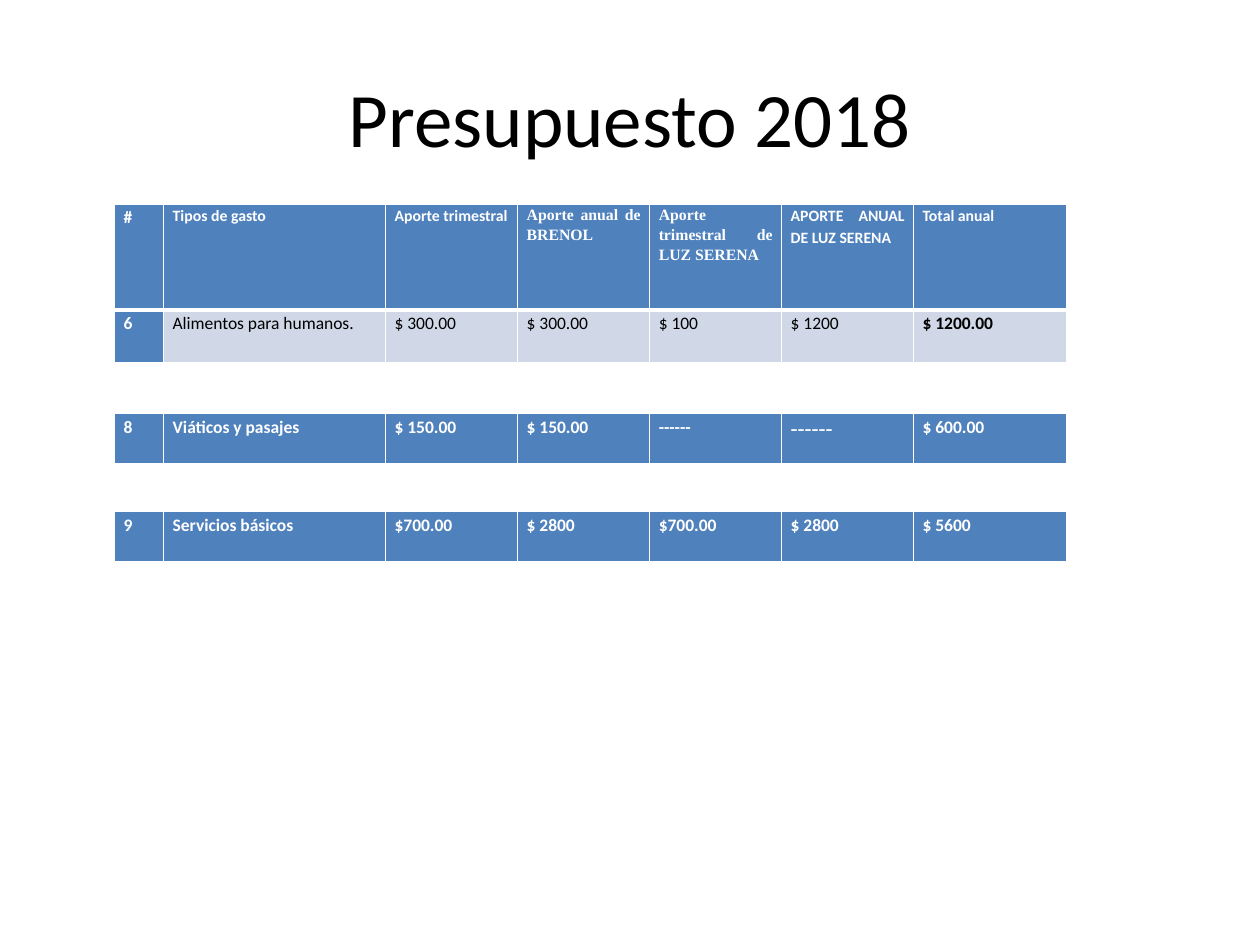
from lxml import etree
from pptx import Presentation
from pptx.dml.color import RGBColor
from pptx.enum.text import MSO_ANCHOR, PP_ALIGN
from pptx.oxml.ns import qn
from pptx.util import Pt

MIDDLE = MSO_ANCHOR.MIDDLE
CENTER, JUSTIFY, LEFT = PP_ALIGN.CENTER, PP_ALIGN.JUSTIFY, PP_ALIGN.LEFT

THEME = {
    "sans": "Calibri", "serif": "Times New Roman",
    "black": "000000", "white": "FFFFFF", "blue": "4F81BD", "pale": "D0D8E8",
    "title": 44, "header": 9, "body": 10, "dash": 12,
}

TITLE = "Presupuesto 2018"
SERIF = {"name": THEME["serif"]}
PLAIN = {"bold": False, "color": THEME["black"]}
TOTAL = {"bold": True, "color": THEME["black"]}

HEADER = [
    ("#", {"size": THEME["body"]}), "Tipos de gasto", "Aporte trimestral",
    ("Aporte anual de BRENOL", SERIF),
    ("Aporte trimestral de LUZ SERENA", SERIF),
    "APORTE ANUAL DE LUZ SERENA", "Total anual",
]
FOOD = ["6"] + [
    (text, PLAIN)
    for text in ("Alimentos para humanos.", "$ 300.00", "$ 300.00", "$ 100", "$ 1200")
] + [("$ 1200.00", TOTAL)]
TRAVEL = [
    "8", "Viáticos y pasajes", "$ 150.00", "$ 150.00", "------",
    ("------", {"size": THEME["dash"], **SERIF}), "$ 600.00",
]
SERVICES = ["9", "Servicios básicos", "$700.00", "$ 2800", "$700.00", "$ 2800", "$ 5600"]

TABLES = [
    {"top": 116.6, "rows": [("header", 60.5, HEADER), ("pale", 30.2, FOOD)]},
    {"top": 236.2, "rows": [("accent", 29.5, TRAVEL)]},
    {"top": 292.3, "rows": [("accent", 29.5, SERVICES)]},
]
TABLE_LEFT = 65.5
COLUMN_WIDTHS = [28, 126.8, 75.5, 75.5, 75.4, 75.4, 87.6]
JUSTIFIED_COLUMNS = {0, 1, len(COLUMN_WIDTHS) - 1}
CELL_FORMAT = {
    "margin_left": Pt(5.2), "margin_right": Pt(5.2),
    "margin_top": Pt(0), "margin_bottom": Pt(0),
}
THICK_BOTTOM = {"lnL": 1, "lnR": 1, "lnT": 1, "lnB": 3}
BELOW_HEADER = {"lnL": 1, "lnR": 1, "lnB": 1}


def set_values(target, values):
    for name, value in values.items():
        setattr(target, name, value)


def write(paragraph, text, size, color, bold=False, name=THEME["sans"]):
    run = paragraph.add_run()
    run.text = text
    set_values(run.font, {"size": Pt(size), "bold": bold, "name": name})
    run.font.color.rgb = RGBColor.from_string(color)


def add_borders(cell, widths):
    properties = cell._tc.get_or_add_tcPr()
    for tag, width in widths.items():
        line = etree.SubElement(properties, qn(f"a:{tag}"), w=str(Pt(width)))
        fill = etree.SubElement(line, qn("a:solidFill"))
        etree.SubElement(fill, qn("a:srgbClr"), val=THEME["white"])


def fill_cell(cell, entry, kind, column):
    text, changes = entry if isinstance(entry, tuple) else (entry, {})
    header = kind == "header"
    pale = kind == "pale"
    style = {
        "size": THEME["header" if header else "body"],
        "color": THEME["white"], "bold": True, **changes,
    }
    set_values(cell, CELL_FORMAT)
    add_borders(cell, BELOW_HEADER if pale else THICK_BOTTOM)
    cell.fill.solid()
    fill = THEME["pale" if pale and column else "blue"]
    cell.fill.fore_color.rgb = RGBColor.from_string(fill)
    paragraph = cell.text_frame.paragraphs[0]
    justified = header or column in JUSTIFIED_COLUMNS
    set_values(paragraph, {"alignment": JUSTIFY if justified else LEFT, "line_spacing": 1.15})
    write(paragraph, text, **style)


def add_budget_table(slide, top, rows):
    height = sum(row_height for _, row_height, _ in rows)
    table = slide.shapes.add_table(
        len(rows), len(COLUMN_WIDTHS),
        Pt(TABLE_LEFT), Pt(top), Pt(sum(COLUMN_WIDTHS)), Pt(height),
    ).table
    for column, width in zip(table.columns, COLUMN_WIDTHS):
        column.width = Pt(width)
    for row, (kind, row_height, entries) in zip(table.rows, rows):
        row.height = Pt(row_height)
        for column, (cell, entry) in enumerate(zip(row.cells, entries)):
            fill_cell(cell, entry, kind, column)


def add_title(slide):
    frame = slide.shapes.add_textbox(Pt(36), Pt(21.6), Pt(648), Pt(90)).text_frame
    set_values(frame, {"word_wrap": True, "vertical_anchor": MIDDLE})
    paragraph = frame.paragraphs[0]
    paragraph.alignment = CENTER
    write(paragraph, TITLE, THEME["title"], THEME["black"])


def main():
    presentation = Presentation()
    set_values(presentation, {"slide_width": Pt(720), "slide_height": Pt(540)})
    slide = presentation.slides.add_slide(presentation.slide_layouts[6])
    add_title(slide)
    for table in TABLES:
        add_budget_table(slide, **table)
    presentation.save("out.pptx")


if __name__ == "__main__":
    main()
